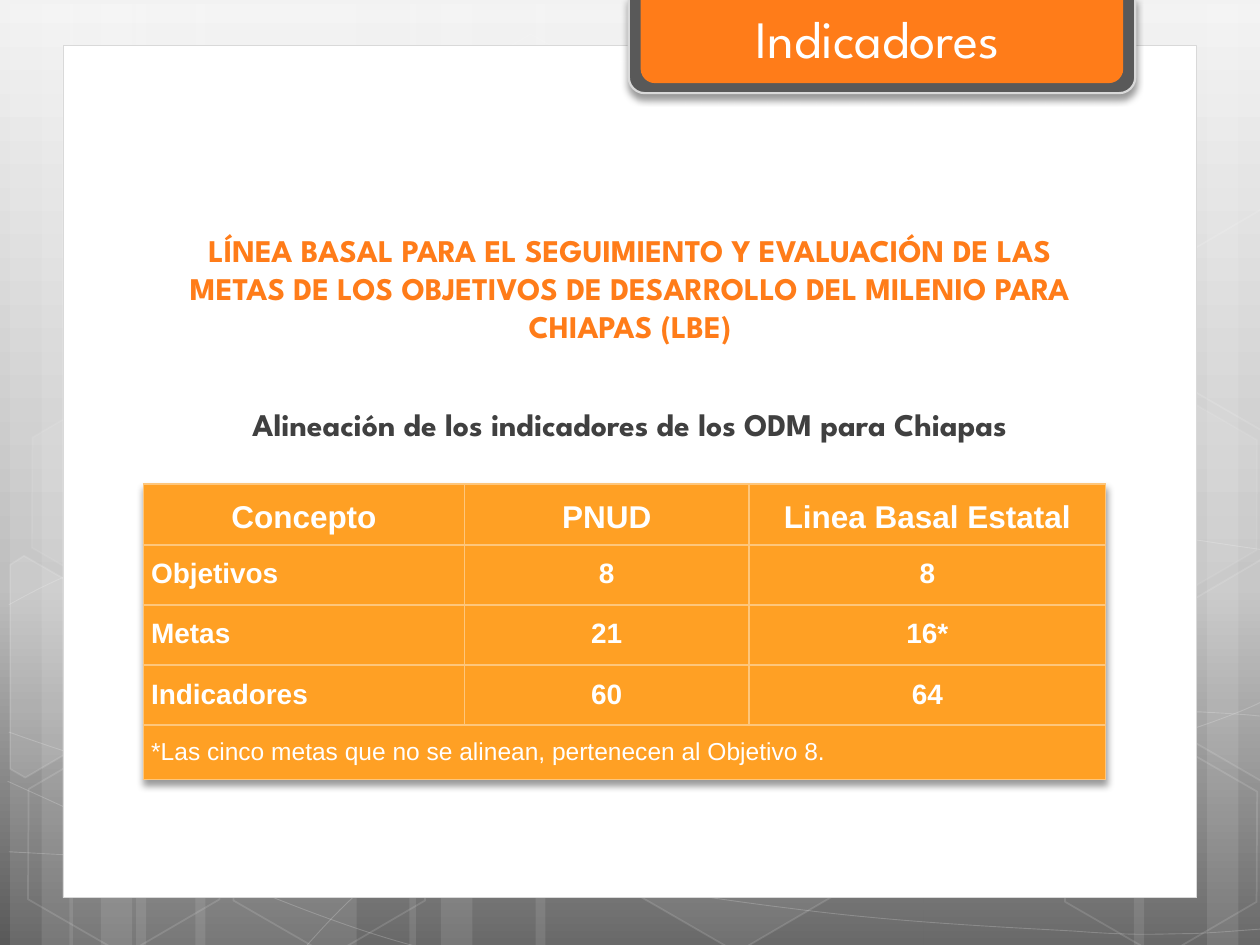
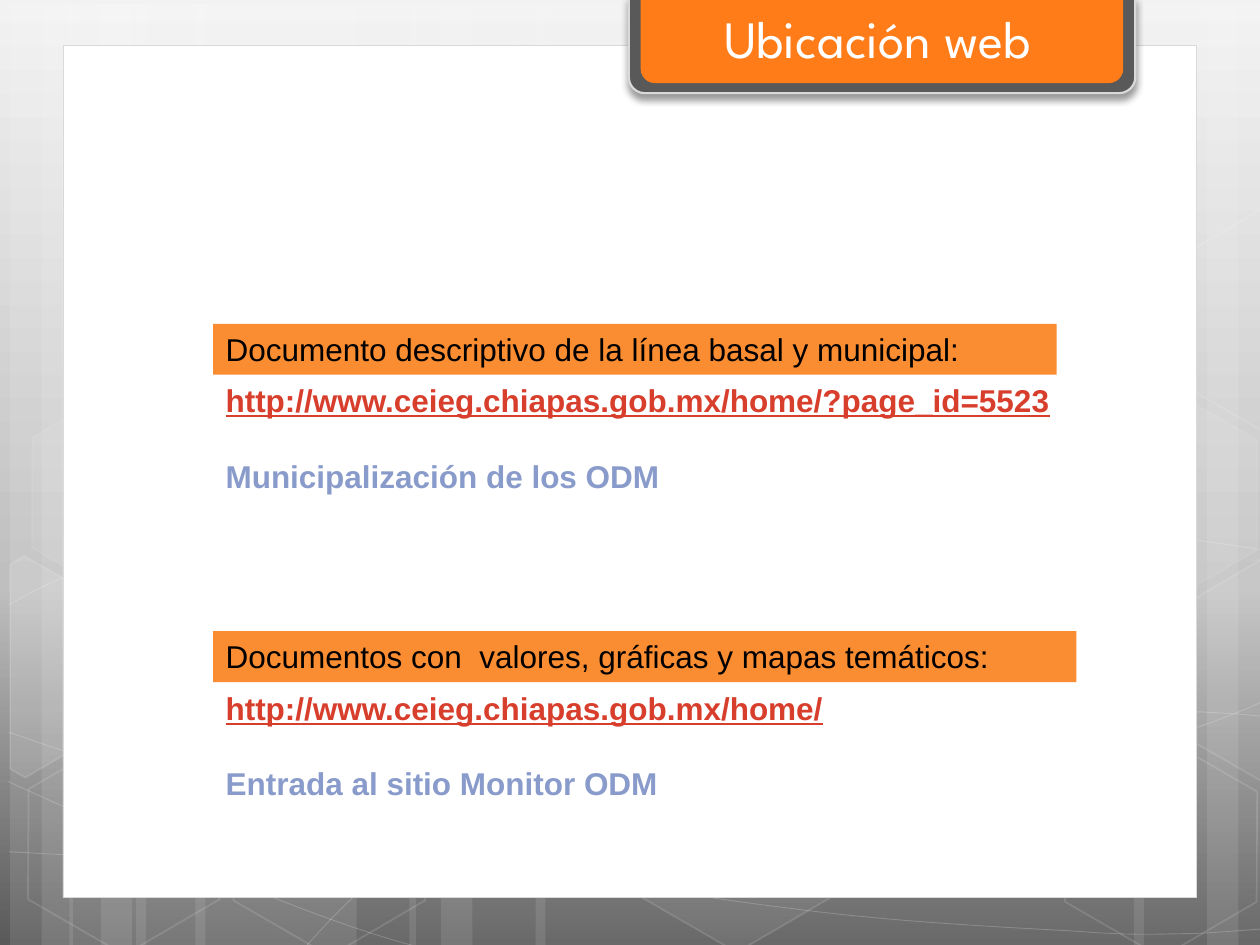
from copy import deepcopy
from dataclasses import dataclass
from math import cos, radians, sin
from typing import NamedTuple

from lxml.etree import SubElement
from pptx import Presentation
from pptx.dml.color import RGBColor
from pptx.enum.shapes import MSO_SHAPE as Preset
from pptx.enum.text import MSO_ANCHOR as Anchor, PP_ALIGN as Align
from pptx.oxml.ns import qn
from pptx.util import Inches, Pt

# Grid: 100 columns by 75 rows of a tenth of an inch
COLUMNS, ROWS = 100, 75
WIDTH, HEIGHT = Inches(10), Inches(7.5)

# Shared colours and fonts
WHITE, BLACK, ORANGE, LABEL = "FFFFFF", "000000", "FF7C19", "FA8C32"
DARK, TEXT_GRAY, PALE = "595959", "404040", "D9D9D9"
LINK, CAPTION = "D83E2C", "899BCA"
TABLE_FILL, TABLE_BORDER = "FFA024", "FEC67B"
DISPLAY, BODY = "League Spartan", "Arial"
BACKGROUND = [(0, "F2F2F2"), (0.62, "BFBFBF"), (1, "595959")]
TILT = 30


class Box(NamedTuple):
    left: float
    top: float
    width: float
    height: float

    def lengths(self) -> tuple[int, ...]:
        return (column(self.left), row(self.top), column(self.width), row(self.height))


@dataclass(frozen=True)
class Style:
    font: str
    size: float
    color: str
    bold: bool = False
    underline: bool = False
    align: Align = Align.LEFT


@dataclass(frozen=True)
class Paint:
    fill: str | None = None
    fill_alpha: int = 100
    line: str | None = None
    line_width: float = 1
    line_alpha: int = 100


@dataclass(frozen=True)
class Hexagon:
    left: float
    top: float
    fill_alpha: int = 0
    line_alpha: int = 12


@dataclass(frozen=True)
class CutHexagon:
    center: tuple[float, float]
    fill_alpha: int
    corners: list


@dataclass(frozen=True)
class Reference:
    label: str
    label_width: float
    top: float
    address: str
    caption: str


TITLE = Style(DISPLAY, 30, WHITE, align=Align.CENTER)
HEADING = Style(DISPLAY, 18, ORANGE, bold=True, align=Align.CENTER)
SUBHEADING = Style(DISPLAY, 18, TEXT_GRAY, bold=True, align=Align.CENTER)
TABLE_HEAD = Style(BODY, 18, WHITE, bold=True, align=Align.CENTER)
TABLE_VALUE = Style(BODY, 16, WHITE, bold=True, align=Align.CENTER)
TABLE_NAME = Style(BODY, 16, WHITE, bold=True, align=Align.JUSTIFY)
TABLE_NOTE = Style(BODY, 14, WHITE, align=Align.JUSTIFY)
LABEL_TEXT = Style(BODY, 18, BLACK)
LINK_TEXT = Style(BODY, 18, LINK, bold=True, underline=True)
CAPTION_TEXT = Style(BODY, 18, CAPTION, bold=True)

# Backdrop: vertical stripes as (left, width)
STRIPES = [(10.8, 17.5), (0.8, 5), (3.3, 8.3), (15.5, 17.5), (5.5, 5), (8, 8.3),
           (73.3, 17.5), (95.8, 5), (90, 8.3), (42.5, 30.8), (32.5, 5), (35, 8.3)]
# Backdrop: chained Bézier curves, a start point and then three points a segment
CURVES = [
    [(0.7, 67.6), (6.1, 67.9), (11.5, 68.2), (19, 68.1), (26.5, 68), (35.8, 67.8), (45.8, 66.8),
     (55.8, 65.8), (70, 63.9), (79.2, 62), (88.3, 60.1), (97.7, 57.1), (100.7, 55.4)],
    [(0.7, 48), (3.6, 46.4), (6.5, 44.9), (12.1, 43.4), (17.8, 41.9), (25.9, 39.7), (34.7, 39),
     (43.6, 38.3), (54.4, 38.2), (65.4, 39), (76.4, 39.8), (94.7, 42.9), (100.7, 43.7)],
    [(0.6, 62), (12.7, 67.5), (24.7, 73), (33.4, 75.2)],
    [(0.7, 58.1), (3.8, 59.2), (7, 60.3), (12.8, 61.9), (18.6, 63.4), (27.3, 65.9), (35.7, 67.6),
     (44, 69.3), (54.5, 71.1), (62.8, 72.1), (71.1, 73.2), (80, 73.6), (85.3, 73.9),
     (90.5, 74.3), (91.9, 74.1), (94.5, 74.1), (97.1, 74), (98.9, 73.8), (100.7, 73.7)],
    [(24.2, 75.2), (26, 73.2), (27.8, 71.2), (30.2, 69.4), (32.6, 67.6), (36, 65.6), (38.8, 64.2),
     (41.6, 62.8), (43.3, 62.2), (47, 61.2), (50.6, 60.2), (57.3, 58.8), (60.8, 58.1),
     (64.4, 57.4), (64.9, 57.4), (68, 57.2), (71.1, 56.9), (76, 56.6), (79.4, 56.5),
     (82.9, 56.4), (88.6, 56.5), (88.6, 56.5), (90.8, 56.5), (93.1, 56.5), (95.3, 56.5),
     (97.1, 56.6), (98.8, 56.7), (99.7, 56.8), (100.6, 56.9), (100.3, 56.8), (100.6, 56.9)],
]
# Backdrop: tilted hexagons, some cut by the slide's edge
HEXAGONS = [
    Hexagon(33.4, 3.9, 4, 8), Hexagon(49.7, 59.2, 6),
    CutHexagon((3.6, 53.8), 10, [(0.8, 44.8), (1.9, 44.1), (9.6, 48.5), (9.5, 57.3),
                                 (2, 61.7), (0.8, 61)]),
    Hexagon(1.1, 59.4), Hexagon(1.4, 31.5, 7, 8), Hexagon(17.4, 59.5),
    Hexagon(75.3, 45.6, 10), Hexagon(83.4, 59.6), Hexagon(83.4, 31.7, 7, 8),
    CutHexagon((98.5, 52.3), 4, [(92.6, 48.8), (100.1, 44.4), (100.9, 44.9), (100.9, 61.6),
                                 (100.2, 62), (92.6, 57.6)]),
    CutHexagon((98.5, 24.4), 0, [(92.6, 21), (100.1, 16.6), (101, 17.1), (100.9, 33.8),
                                 (100.2, 34.2), (92.6, 29.8)]),
]

TABLE_ROWS = [
    ("Concepto", "PNUD", "Linea Basal Estatal"),
    ("Objetivos", "8", "8"),
    ("Metas", "21", "16*"),
    ("Indicadores", "60", "64"),
    ("*Las cinco metas que no se alinean, pertenecen al Objetivo 8.", "", ""),
]
TABLE_COLUMN_WIDTHS = [25.45, 22.6, 28.3]
TABLE_ROW_HEIGHTS = [4.85, 4.77, 4.77, 4.77, 4.33]

REFERENCES = [
    Reference("Documento descriptivo de la línea basal y municipal:", 66.95, 25.7,
              "http://www.ceieg.chiapas.gob.mx/home/?page_id=5523", "Municipalización de los ODM"),
    Reference("Documentos con  valores, gráficas y mapas temáticos:", 68.5, 50.1,
              "http://www.ceieg.chiapas.gob.mx/home/", "Entrada al sitio Monitor ODM"),
]


def column(count: float) -> int:
    return round(WIDTH * count / COLUMNS)


def row(count: float) -> int:
    return round(HEIGHT * count / ROWS)


def rgb(value: str) -> RGBColor:
    return RGBColor.from_string(value)


def set_alpha(parent, percent: int) -> None:
    if percent < 100:
        color = parent.find(qn("a:solidFill")).find(qn("a:srgbClr"))
        SubElement(color, qn("a:alpha"), val=str(percent * 1000))


def paint_shape(shape, paint: Paint) -> None:
    shape.shadow.inherit = False
    properties = shape.element.spPr
    if paint.fill and paint.fill_alpha:
        shape.fill.solid()
        shape.fill.fore_color.rgb = rgb(paint.fill)
        set_alpha(properties, paint.fill_alpha)
    else:
        shape.fill.background()
    if paint.line:
        shape.line.color.rgb = rgb(paint.line)
        shape.line.width = Pt(paint.line_width)
        set_alpha(properties.find(qn("a:ln")), paint.line_alpha)
    else:
        shape.line.fill.background()


def add_shadow(effects) -> None:
    shadow = SubElement(effects, qn("a:outerShdw"), blurRad=str(Pt(4)), dist=str(Pt(3)),
                        dir="5400000", rotWithShape="0")
    color = SubElement(shadow, qn("a:srgbClr"), val=BLACK)
    SubElement(color, qn("a:alpha"), val="40000")


def add_preset(slide, preset: Preset, box: Box, paint: Paint):
    shape = slide.shapes.add_shape(preset, *box.lengths())
    paint_shape(shape, paint)
    return shape


def add_outline(slide, points: list, paint: Paint, close: bool):
    corners = [(column(x), row(y)) for x, y in points]
    builder = slide.shapes.build_freeform(*corners[0])
    builder.add_line_segments(corners[1:], close=close)
    shape = builder.convert_to_shape()
    paint_shape(shape, paint)
    return shape


def add_curve(slide, points: list, paint: Paint) -> None:
    outline = next(add_outline(slide, points, paint, close=False).element.iter(qn("a:path")))
    segments = outline.findall(qn("a:lnTo"))
    for start in range(0, len(segments), 3):
        curve = SubElement(outline, qn("a:cubicBezTo"))
        for segment in segments[start:start + 3]:
            curve.append(segment[0])
            outline.remove(segment)


def add_hexagon(slide, hexagon: Hexagon | CutHexagon) -> None:
    if isinstance(hexagon, Hexagon):
        shape = add_preset(slide, Preset.HEXAGON, Box(hexagon.left, hexagon.top, 17.5, 15.2),
                           Paint(WHITE, hexagon.fill_alpha, WHITE, 1, hexagon.line_alpha))
        shape.adjustments[0] = 0.285
    else:
        (center_x, center_y), angle = hexagon.center, radians(TILT)
        offsets = [(x - center_x, y - center_y) for x, y in hexagon.corners]
        upright = [(center_x + x * cos(angle) + y * sin(angle),
                    center_y + y * cos(angle) - x * sin(angle)) for x, y in offsets]
        shape = add_outline(slide, upright, Paint(WHITE, hexagon.fill_alpha, WHITE, 1, 12), True)
    shape.rotation = TILT


def write_paragraph(paragraph, text: str, style: Style) -> None:
    paragraph.text = text
    paragraph.alignment = style.align
    for run in paragraph.runs:
        run.font.name = style.font
        run.font.size = Pt(style.size)
        run.font.bold = style.bold
        run.font.underline = style.underline
        run.font.color.rgb = rgb(style.color)


def write_frame(text_frame, lines: list, anchor: Anchor = Anchor.TOP) -> None:
    text_frame.word_wrap = True
    text_frame.vertical_anchor = anchor
    for index, (text, style) in enumerate(lines):
        paragraph = text_frame.add_paragraph() if index else text_frame.paragraphs[0]
        write_paragraph(paragraph, text, style)
        if index:
            paragraph.space_before = Pt(21.5)


def add_text(slide, box: Box, lines: list, anchor: Anchor = Anchor.TOP) -> None:
    write_frame(slide.shapes.add_textbox(*box.lengths()).text_frame, lines, anchor)


def draw_backdrop(slide) -> None:
    fill = slide.background.fill
    fill.gradient()
    fill.gradient_angle = 270
    stop_list = next(slide.element.iter(qn("a:gsLst")))
    stop_list.append(deepcopy(stop_list[0]))
    for stop, (position, color) in zip(fill.gradient_stops, BACKGROUND):
        stop.position = position
        stop.color.rgb = rgb(color)
    for left, width in STRIPES:
        add_preset(slide, Preset.RECTANGLE, Box(left, 0.3, width, ROWS), Paint(WHITE, 10))
    for points in CURVES:
        add_curve(slide, points, Paint(line=WHITE, line_width=0.5, line_alpha=20))
    for hexagon in HEXAGONS:
        add_hexagon(slide, hexagon)


def add_titled_slide(presentation, title: str):
    slide = presentation.slides.add_slide(presentation.slide_layouts[6])
    draw_backdrop(slide)
    # White sheet and hanging title tab
    add_preset(slide, Preset.RECTANGLE, Box(5, 3.6, 90, 67.65), Paint(WHITE, line=PALE, line_width=0.5))
    tabs = [add_preset(slide, Preset.ROUND_2_SAME_RECTANGLE, box, paint) for box, paint in (
        (Box(49.9, -0.2, 40.2, 7.6), Paint(DARK, line=PALE, line_width=1.25)),
        (Box(50.85, -0.2, 38.3, 6.8), Paint(ORANGE)))]
    for tab in tabs:
        tab.element.spPr.xfrm.set("flipV", "1")
    add_shadow(tabs[0].element.spPr.find(qn("a:effectLst")))
    add_text(slide, Box(50, 0, 39.3, 7.1), [(title, TITLE)])
    return slide


def set_borders(cell) -> None:
    properties = cell._tc.get_or_add_tcPr()
    for index, side in enumerate(("lnL", "lnR", "lnT", "lnB")):
        line = SubElement(properties, qn(f"a:{side}"), w=str(Pt(1)))
        SubElement(SubElement(line, qn("a:solidFill")), qn("a:srgbClr"), val=TABLE_BORDER)
        properties.insert(index, line)


def cell_style(row_index: int, column_index: int) -> Style:
    if row_index in (0, len(TABLE_ROWS) - 1):
        return TABLE_NOTE if row_index else TABLE_HEAD
    return TABLE_VALUE if column_index else TABLE_NAME


def draw_alignment_table(slide) -> None:
    box = Box(11.4, 38.4, sum(TABLE_COLUMN_WIDTHS), sum(TABLE_ROW_HEIGHTS))
    table = slide.shapes.add_table(len(TABLE_ROWS), len(TABLE_COLUMN_WIDTHS), *box.lengths()).table
    effects = SubElement(table._tbl.tblPr, qn("a:effectLst"))
    add_shadow(effects)
    table._tbl.tblPr.insert(0, effects)
    for table_column, width in zip(table.columns, TABLE_COLUMN_WIDTHS):
        table_column.width = column(width)
    for row_index, (texts, height) in enumerate(zip(TABLE_ROWS, TABLE_ROW_HEIGHTS)):
        table.rows[row_index].height = row(height)
        inset = row(0.6 if row_index else 0.4)
        for column_index, text in enumerate(texts):
            cell = table.cell(row_index, column_index)
            cell.margin_left = cell.margin_right = cell.margin_top = cell.margin_bottom = inset
            cell.vertical_anchor = Anchor.TOP if row_index else Anchor.MIDDLE
            cell.fill.solid()
            cell.fill.fore_color.rgb = rgb(TABLE_FILL)
            set_borders(cell)
            paragraph = cell.text_frame.paragraphs[0]
            write_paragraph(paragraph, text, cell_style(row_index, column_index))
            paragraph.line_spacing = 1.2
    table.cell(len(TABLE_ROWS) - 1, 0).merge(cell)


def draw_reference(slide, reference: Reference) -> None:
    add_text(slide, Box(16.92, reference.top + 4.07, 73.2, 10.1),
             [(reference.address, LINK_TEXT), (reference.caption, CAPTION_TEXT)])
    label = add_preset(slide, Preset.RECTANGLE,
                       Box(16.92, reference.top, reference.label_width, 4.04), Paint(LABEL))
    write_frame(label.text_frame, [(reference.label, LABEL_TEXT)])


def main() -> None:
    presentation = Presentation()
    presentation.slide_width, presentation.slide_height = WIDTH, HEIGHT
    # Indicators
    slide = add_titled_slide(presentation, "Indicadores")
    add_text(slide, Box(13.4, 17.85, 73.2, 10.1), [(
        "LÍNEA BASAL PARA EL SEGUIMIENTO Y EVALUACIÓN DE LAS METAS DE LOS OBJETIVOS "
        "DE DESARROLLO DEL MILENIO PARA CHIAPAS (LBE)", HEADING)])
    draw_alignment_table(slide)
    add_text(slide, Box(12.2, 30.45, 75.6, 6.4),
             [("Alineación de los indicadores de los ODM para Chiapas", SUBHEADING)], Anchor.MIDDLE)
    # Web addresses
    slide = add_titled_slide(presentation, "Ubicación web")
    for reference in REFERENCES:
        draw_reference(slide, reference)
    presentation.save("out.pptx")


if __name__ == "__main__":
    main()
